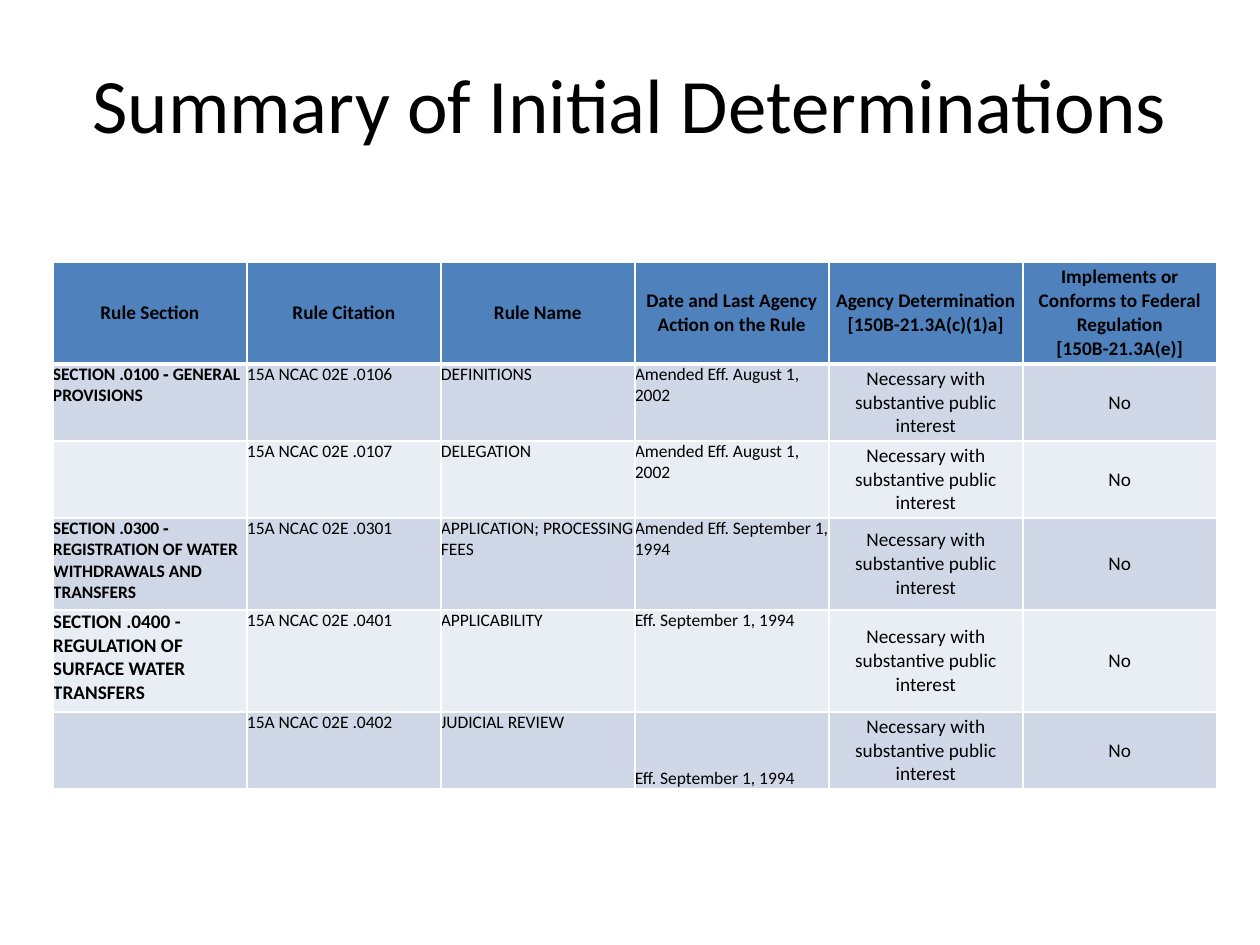
from dataclasses import dataclass

from lxml.etree import SubElement
from pptx import Presentation
from pptx.dml.color import RGBColor
from pptx.enum.text import MSO_ANCHOR, PP_ALIGN
from pptx.oxml.ns import qn
from pptx.slide import Slide
from pptx.table import Table, _Cell
from pptx.util import Emu, Pt

PIXELS_PER_INCH = 126
FONT = "Calibri"
BLACK = RGBColor(0x00, 0x00, 0x00)
WHITE = RGBColor(0xFF, 0xFF, 0xFF)
HEADER_BLUE = RGBColor(0x4F, 0x81, 0xBD)
BAND_DARK = RGBColor(0xD0, 0xD8, 0xE8)
BAND_LIGHT = RGBColor(0xE9, 0xED, 0xF4)
COLUMN_WIDTH = 194
HEADER_HEIGHT = 102
THIN_LINE = 1
THICK_LINE = 3


@dataclass(frozen=True)
class CellStyle:
    size: int
    bold: bool = False
    align: PP_ALIGN = PP_ALIGN.LEFT
    anchor: MSO_ANCHOR = MSO_ANCHOR.TOP


@dataclass(frozen=True)
class Rule:
    section: str
    citation: str
    name: str
    action: str
    height: int
    section_size: int = 10
    action_anchor: MSO_ANCHOR = MSO_ANCHOR.TOP
    determination: str = "Necessary with substantive public interest"
    federal: str = "No"


HEADER_STYLE = CellStyle(11, True, PP_ALIGN.CENTER, MSO_ANCHOR.MIDDLE)
BODY_STYLE = CellStyle(10)
RESULT_STYLE = CellStyle(11, False, PP_ALIGN.CENTER, MSO_ANCHOR.MIDDLE)

HEADERS = (
    "Rule Section",
    "Rule Citation",
    "Rule Name",
    "Date and Last Agency Action on the Rule",
    "Agency Determination [150B-21.3A(c)(1)a]",
    "Implements or Conforms to Federal Regulation [150B-21.3A(e)]",
)
RULES = (
    Rule("SECTION .0100 ‑ GENERAL PROVISIONS", "15A NCAC 02E .0106",
         "DEFINITIONS", "Amended Eff. August 1, 2002", 77),
    Rule("", "15A NCAC 02E .0107",
         "DELEGATION", "Amended Eff. August 1, 2002", 77),
    Rule("SECTION .0300 ‑ REGISTRATION OF WATER WITHDRAWALS AND TRANSFERS",
         "15A NCAC 02E .0301", "APPLICATION; PROCESSING FEES",
         "Amended Eff. September 1, 1994", 92),
    Rule("SECTION .0400 - REGULATION OF SURFACE WATER TRANSFERS",
         "15A NCAC 02E .0401", "APPLICABILITY",
         "Eff. September 1, 1994", 102, section_size=11),
    Rule("", "15A NCAC 02E .0402", "JUDICIAL REVIEW",
         "Eff. September 1, 1994", 77, action_anchor=MSO_ANCHOR.BOTTOM),
)


def px(length: int) -> Emu:
    return Emu(round(length * 914400 / PIXELS_PER_INCH))


def add_title(slide: Slide, text: str) -> None:
    title = slide.shapes.title
    title.left, title.top, title.width, title.height = px(63), px(38), px(1134), px(130)
    title.text_frame.text = text
    title.text_frame.vertical_anchor = MSO_ANCHOR.MIDDLE
    para = title.text_frame.paragraphs[0]
    para.alignment = PP_ALIGN.CENTER
    font = para.runs[0].font
    font.name, font.size, font.color.rgb = FONT, Pt(44), BLACK


def draw_borders(cell: _Cell, top: int, bottom: int) -> None:
    properties = cell._tc.get_or_add_tcPr()
    widths = {"a:lnL": THIN_LINE, "a:lnR": THIN_LINE, "a:lnT": top, "a:lnB": bottom}
    for side, width in widths.items():
        line = SubElement(properties, qn(side), w=str(Pt(width)))
        fill = SubElement(line, qn("a:solidFill"))
        SubElement(fill, qn("a:srgbClr"), val=str(WHITE))


def fill_cell(cell: _Cell, text: str, style: CellStyle, color: RGBColor) -> None:
    cell.fill.solid()
    cell.fill.fore_color.rgb = color
    cell.margin_left = cell.margin_right = cell.margin_top = cell.margin_bottom = 0
    cell.vertical_anchor = style.anchor
    cell.text_frame.text = text
    para = cell.text_frame.paragraphs[0]
    para.alignment = style.align
    for span in para.runs:
        font = span.font
        font.name, font.size, font.bold = FONT, Pt(style.size), style.bold
        font.color.rgb = BLACK


def fill_header(table: Table) -> None:
    table.rows[0].height = px(HEADER_HEIGHT)
    for cell, text in zip(table.rows[0].cells, HEADERS):
        draw_borders(cell, THIN_LINE, THICK_LINE)
        fill_cell(cell, text, HEADER_STYLE, HEADER_BLUE)


def fill_rule(table: Table, index: int, rule: Rule) -> None:
    row = table.rows[index]
    row.height = px(rule.height)
    color = BAND_DARK if index % 2 else BAND_LIGHT
    top = THICK_LINE if index == 1 else THIN_LINE
    contents = (
        (rule.section, CellStyle(rule.section_size, bold=True)),
        (rule.citation, BODY_STYLE),
        (rule.name, BODY_STYLE),
        (rule.action, CellStyle(10, anchor=rule.action_anchor)),
        (rule.determination, RESULT_STYLE),
        (rule.federal, RESULT_STYLE),
    )
    for cell, (text, style) in zip(row.cells, contents):
        draw_borders(cell, top, THIN_LINE)
        fill_cell(cell, text, style, color)


def add_rules_table(slide: Slide) -> None:
    height = HEADER_HEIGHT + sum(rule.height for rule in RULES)
    frame = slide.shapes.add_table(
        len(RULES) + 1, len(HEADERS),
        px(53), px(262), px(COLUMN_WIDTH * len(HEADERS)), px(height),
    )
    table = frame.table
    for column in table.columns:
        column.width = px(COLUMN_WIDTH)
    fill_header(table)
    for index, rule in enumerate(RULES, start=1):
        fill_rule(table, index, rule)


def main() -> None:
    deck = Presentation()
    deck.slide_width, deck.slide_height = px(1260), px(945)
    page = deck.slides.add_slide(deck.slide_layouts[5])
    add_title(page, "Summary of Initial Determinations")
    add_rules_table(page)
    deck.save("out.pptx")


if __name__ == "__main__":
    main()
